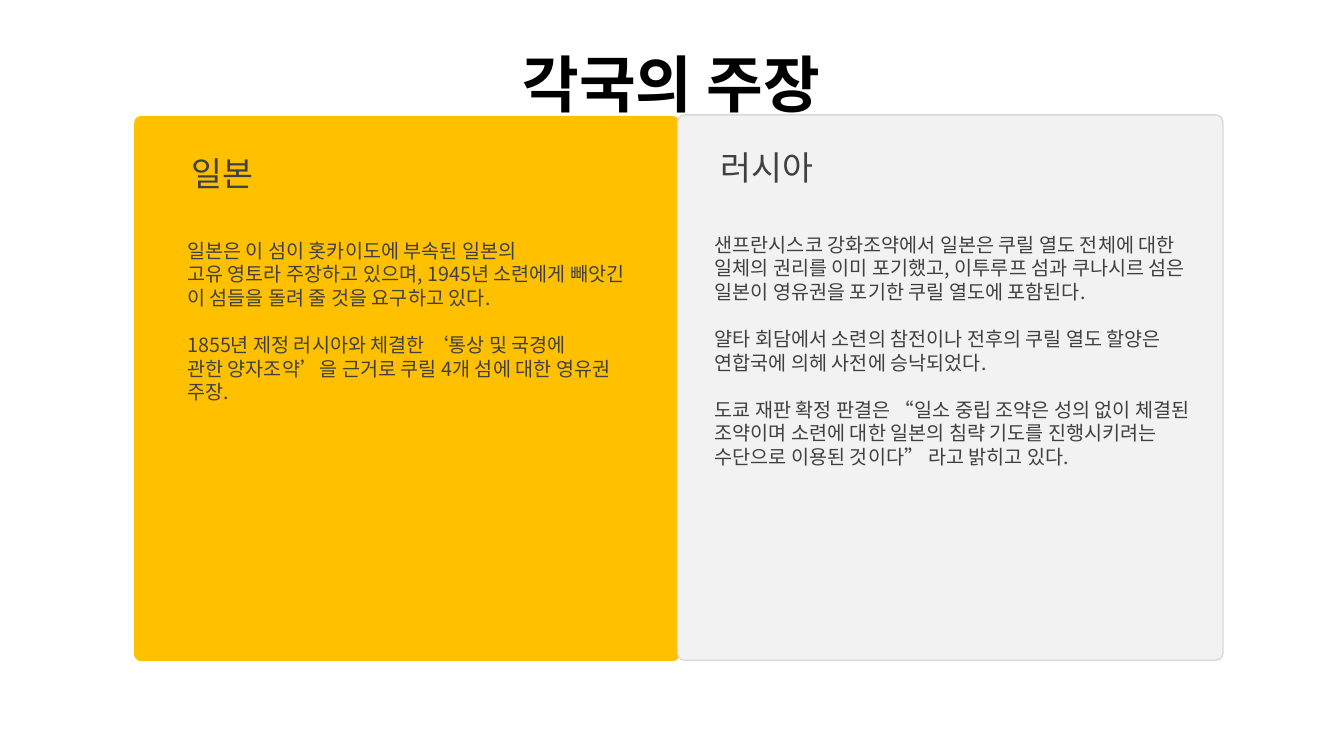
from pptx import Presentation
from pptx.dml.color import RGBColor
from pptx.enum.shapes import MSO_SHAPE
from pptx.enum.text import MSO_AUTO_SIZE, PP_ALIGN
from pptx.oxml.ns import qn
from pptx.util import Inches, Pt
from lxml import etree

FONT = "Noto Sans CJK KR"
COLORS = {
    "title": "000000",
    "text": "404040",
    "japan": "FFC000",
    "russia": "F2F2F2",
    "border": "D9D9D9",
}
CARD_SIZE = 5.41
BLANK_LINE = Pt(16.8)


def rgb(name):
    return RGBColor.from_string(COLORS[name])


def add_text(box, paragraphs, size, color="text", bold=False, align=PP_ALIGN.LEFT, wrap=False):
    """Add a text box; each paragraph is a (text, space before) pair."""
    tf = s.shapes.add_textbox(*map(Inches, box)).text_frame
    tf.word_wrap = wrap
    tf.auto_size = MSO_AUTO_SIZE.SHAPE_TO_FIT_TEXT
    for i, (text, space) in enumerate(paragraphs):
        p = tf.add_paragraph() if i else tf.paragraphs[0]
        p.text = text
        p.alignment = align
        p.space_before = space
        for r in p.runs:
            r.font.name = FONT
            r.font.size = Pt(size)
            r.font.bold = bold
            r.font.color.rgb = rgb(color)
            etree.SubElement(r.font._element, qn("a:ea")).set("typeface", FONT)


prs = Presentation()
prs.slide_width, prs.slide_height = Inches(13.33), Inches(7.5)
s = prs.slides.add_slide(prs.slide_layouts[6])

add_text((4.91, 0.41, 3.5, 0.84), [("각국의 주장", 0)], 44, "title", True, PP_ALIGN.CENTER)

# Card corner, fill, border, heading and body of each country
countries = [
    (1.33, 1.15, "japan", None, "일본", (1.77, 1.47, 0.88, 0.5), (1.76, 2.32, 5.07, 1.99), [
        ("일본은 이 섬이 홋카이도에 부속된 일본의", 0),
        ("고유 영토라 주장하고 있으며, 1945년 소련에게 빼앗긴", 0),
        ("이 섬들을 돌려 줄 것을 요구하고 있다.", 0),
        ("1855년 제정 러시아와 체결한 ‘통상 및 국경에", BLANK_LINE),
        ("관한 양자조약’을 근거로 쿠릴 4개 섬에 대한 영유권", 0),
        ("주장.", 0),
    ]),
    (6.72, 1.14, "russia", "border", "러시아", (7, 1.41, 1.21, 0.5), (6.99, 2.26, 4.95, 2.69), [
        ("샌프란시스코 강화조약에서 일본은 쿠릴 열도 전체에 대한 일체의 권리를 이미 포기했고, "
         "이투루프 섬과 쿠나시르 섬은 일본이 영유권을 포기한 쿠릴 열도에 포함된다.", 0),
        ("얄타 회담에서 소련의 참전이나 전후의 쿠릴 열도 할양은 연합국에 의헤 사전에 승낙되었다.",
         BLANK_LINE),
        ("도쿄 재판 확정 판결은 “일소 중립 조약은 성의 없이 체결된 조약이며 소련에 대한 일본의 "
         "침략 기도를 진행시키려는 수단으로 이용된 것이다” 라고 밝히고 있다.", BLANK_LINE),
    ]),
]

for left, top, fill, border, heading, heading_box, body_box, body in countries:
    sp = s.shapes.add_shape(MSO_SHAPE.ROUNDED_RECTANGLE, Inches(left), Inches(top),
                            Inches(CARD_SIZE), Inches(CARD_SIZE))
    sp.adjustments[0] = 0.013
    sp.shadow.inherit = False
    sp.fill.solid()
    sp.fill.fore_color.rgb = rgb(fill)
    if border:
        sp.line.color.rgb = rgb(border)
        sp.line.width = Pt(1)
    else:
        sp.line.fill.background()
    add_text(heading_box, [(heading, 0)], 24, align=PP_ALIGN.CENTER)
    add_text(body_box, body, 14, wrap=True)

prs.save("out.pptx")
